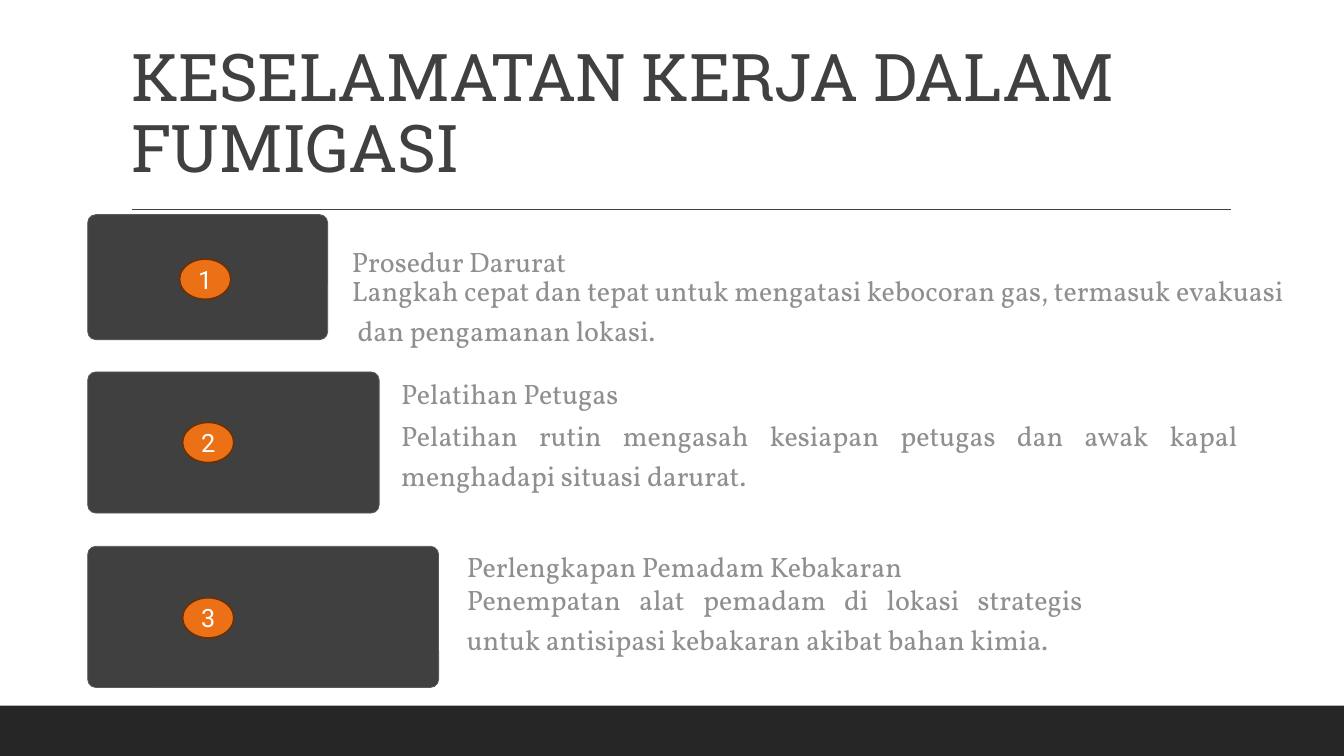
"""Build the slide on work safety during fumigation."""
from lxml import etree
from pptx import Presentation
from pptx.dml.color import RGBColor
from pptx.enum.shapes import MSO_CONNECTOR, MSO_SHAPE
from pptx.enum.text import MSO_ANCHOR, MSO_AUTO_SIZE, PP_ALIGN
from pptx.oxml.ns import qn
from pptx.util import Inches, Pt

RECTANGLE, ROUNDED, OVAL = MSO_SHAPE.RECTANGLE, MSO_SHAPE.ROUNDED_RECTANGLE, MSO_SHAPE.OVAL
STRAIGHT = MSO_CONNECTOR.STRAIGHT
TOP, MIDDLE, BOTTOM = MSO_ANCHOR.TOP, MSO_ANCHOR.MIDDLE, MSO_ANCHOR.BOTTOM
LEFT, CENTER, JUSTIFY = PP_ALIGN.LEFT, PP_ALIGN.CENTER, PP_ALIGN.JUSTIFY
NO_AUTOFIT = MSO_AUTO_SIZE.NONE

WHITE = RGBColor(0xFF, 0xFF, 0xFF)
FOOTER_BLACK = RGBColor(0x26, 0x26, 0x26)
DARK_GRAY = RGBColor(0x40, 0x40, 0x40)
EDGE_GRAY = RGBColor(0x59, 0x59, 0x59)
TEXT_GRAY = RGBColor(0x8F, 0x8F, 0x8F)
ORANGE = RGBColor(0xEC, 0x70, 0x16)
BROWN = RGBColor(0x67, 0x31, 0x0A)

PANEL_LEFT = 0.87
CORNER_RADIUS = 0.08

# panel (top, width, height), badge (left, top), heading, heading (top, width),
# body paragraphs, body (top, width, height), text left, body wraps
TOPICS = [
    ((2.13, 2.38, 1.24), (1.78, 2.57), 3.49, "Prosedur Darurat", (2.38, 2.86),
     ["Langkah cepat dan tepat untuk mengatasi kebocoran gas, termasuk evakuasi",
      " dan pengamanan lokasi."], (2.65, 9.32, 0.4), False),
    ((3.69, 2.89, 1.4), (1.81, 4.19), 3.98, "Pelatihan Petugas", (3.69, 2.86),
     ["Pelatihan rutin mengasah kesiapan petugas dan awak kapal "
      "menghadapi situasi darurat."], (4.09, 8.3, 0.64), True),
    ((5.42, 3.48, 1.4), (1.81, 5.93), 4.63, "Perlengkapan Pemadam Kebakaran", (5.4, 5.02),
     ["Penempatan alat pemadam di lokasi strategis "
      "untuk antisipasi kebakaran akibat bahan kimia."], (5.72, 6.11, 0.64), True),
]


def format_text(para, font_name, size, color, alignment, spacing):
    """Format a paragraph and all of its runs."""
    para.alignment = alignment
    para.line_spacing = spacing
    for span in para.runs:
        span.font.name = font_name
        span.font.size = Pt(size)
        span.font.color.rgb = color


def add_block(page, kind, left, top, width, height, fill, edge=None, edge_width=0):
    """Add a filled preset shape, outlined if an edge colour is given."""
    block = page.shapes.add_shape(kind, Inches(left), Inches(top), Inches(width), Inches(height))
    block.shadow.inherit = False
    block.fill.solid()
    block.fill.fore_color.rgb = fill
    if edge is None:
        block.line.fill.background()
    else:
        block.line.color.rgb = edge
        block.line.width = Pt(edge_width)
    return block


def add_rule(page):
    """Add the thin rule below the title."""
    rule = page.shapes.add_connector(
        STRAIGHT, Inches(1.31), Inches(2.08), Inches(12.21), Inches(2.08))
    rule.line.color.rgb = DARK_GRAY
    rule.line.width = Pt(1)
    etree.SubElement(rule._element.spPr, qn("a:effectLst"))


def set_title(page):
    """Place and format the title placeholder."""
    title = page.shapes.title
    title.left, title.top = Inches(1.2), Inches(0.31)
    title.width, title.height = Inches(11), Inches(1.59)
    frame = title.text_frame
    frame.text = "KESELAMATAN KERJA DALAM FUMIGASI"
    frame.auto_size = NO_AUTOFIT
    frame.vertical_anchor = BOTTOM
    para = frame.paragraphs[0]
    format_text(para, "Roboto Slab", 47, DARK_GRAY, LEFT, 0.9)
    para.runs[0].font._element.set("spc", "-50")


def add_text(page, left, top, width, height, lines, spacing, alignment=LEFT, wrap=False):
    """Add a gray text box without margins; only its first paragraph takes the alignment."""
    box = page.shapes.add_textbox(Inches(left), Inches(top), Inches(width), Inches(height))
    frame = box.text_frame
    frame.margin_left = frame.margin_right = frame.margin_top = frame.margin_bottom = 0
    frame.word_wrap = wrap
    frame.vertical_anchor = TOP
    frame.text = "\n".join(lines)
    for index, para in enumerate(frame.paragraphs):
        format_text(para, "Vollkorn", 20, TEXT_GRAY, LEFT if index else alignment, Pt(spacing))


def add_panel(page, top, width, height):
    """Add a dark rounded panel with a constant corner radius."""
    panel = add_block(page, ROUNDED, PANEL_LEFT, top, width, height, DARK_GRAY, EDGE_GRAY, 0.6)
    panel.adjustments[0] = CORNER_RADIUS / height


def add_badge(page, left, top, number):
    """Add a numbered orange oval."""
    badge = add_block(page, OVAL, left, top, 0.51, 0.4, ORANGE, BROWN, 1.25)
    frame = badge.text_frame
    frame.text = str(number)
    frame.vertical_anchor = MIDDLE
    format_text(frame.paragraphs[0], "Roboto", 18, WHITE, CENTER, 1.0)


def main():
    """Build and save the deck."""
    deck = Presentation()
    deck.slide_width, deck.slide_height = Inches(13.33), Inches(7.5)
    page = deck.slides.add_slide(deck.slide_layouts[5])
    add_block(page, RECTANGLE, 0, 7, 13.33, 0.5, FOOTER_BLACK)
    add_rule(page)
    set_title(page)
    for number, topic in enumerate(TOPICS, start=1):
        panel, badge, left, heading, heading_place, lines, body_place, wrap = topic
        add_panel(page, *panel)
        add_text(page, left, *heading_place, 0.31, [heading], 27.5)
        add_text(page, left, *body_place, lines, 28.5, JUSTIFY, wrap)
        add_badge(page, *badge, number)
    deck.save("out.pptx")


if __name__ == "__main__":
    main()
